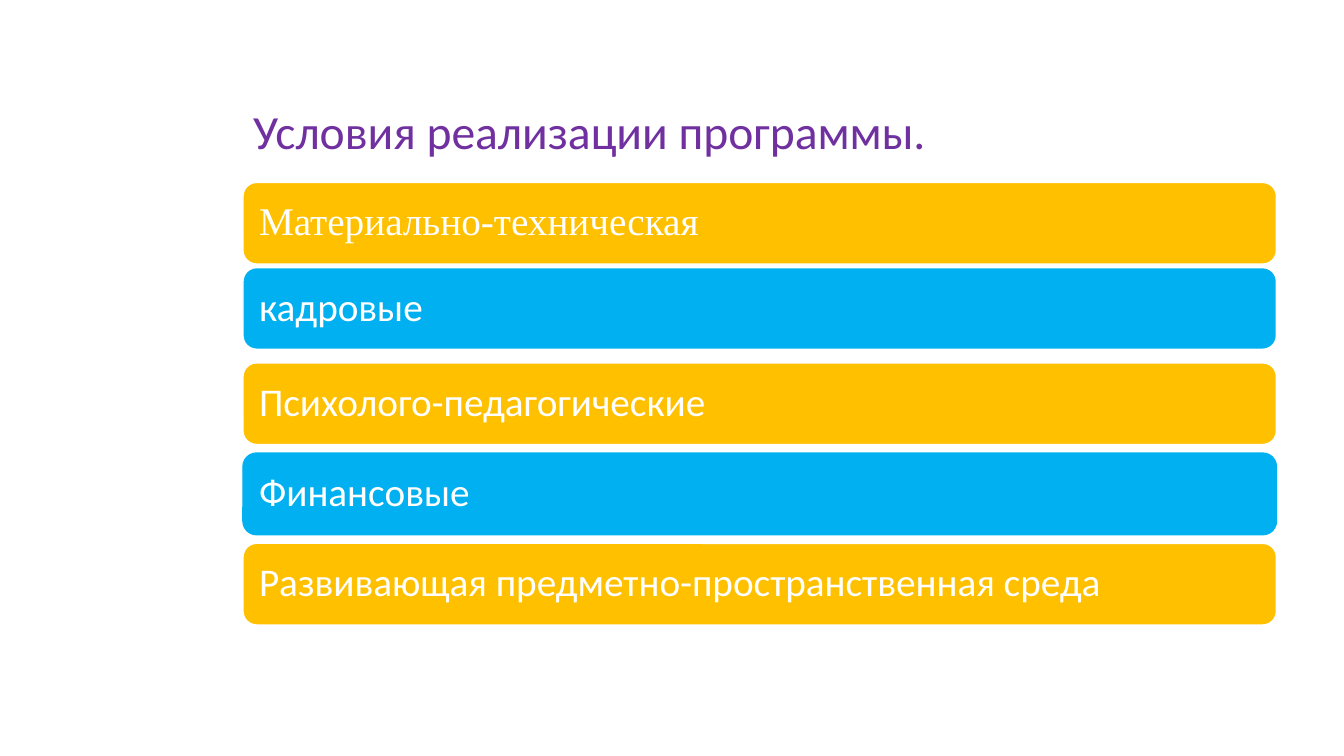
from dataclasses import dataclass

from pptx import Presentation
from pptx.dml.color import RGBColor
from pptx.enum.shapes import MSO_SHAPE
from pptx.enum.text import MSO_ANCHOR, MSO_AUTO_SIZE, PP_ALIGN
from pptx.util import Inches, Pt


@dataclass(frozen=True)
class Theme:
    purple: RGBColor = RGBColor.from_string("7030A0")
    amber: RGBColor = RGBColor.from_string("FFC000")
    blue: RGBColor = RGBColor.from_string("00B0F0")
    white: RGBColor = RGBColor.from_string("FFFFFF")
    sans: str = "Calibri"
    serif: str = "Times New Roman"
    title_size: Pt = Pt(34)
    bar_size: Pt = Pt(28)


def set_text(shape, text, font_name, size, color, anchor):
    text_frame = shape.text_frame
    text_frame.text = text
    text_frame.word_wrap = True
    text_frame.auto_size = MSO_AUTO_SIZE.NONE
    text_frame.vertical_anchor = anchor
    paragraph = text_frame.paragraphs[0]
    paragraph.alignment = PP_ALIGN.LEFT
    paragraph.line_spacing = 0.9
    font = paragraph.runs[0].font
    font.name, font.size, font.color.rgb = font_name, size, color


theme = Theme()
presentation = Presentation()
presentation.slide_width = Inches(13.33)
presentation.slide_height = Inches(7.5)
slide = presentation.slides.add_slide(presentation.slide_layouts[5])

column_left, column_width = Inches(2.41), Inches(10.25)
first_top, row_pitch, bar_height = Inches(1.81), Inches(0.895), Inches(0.81)
inset = Inches(0.12)

title = slide.shapes.title
title.left, title.top = column_left, Inches(0.33)
title.width, title.height = column_width, Inches(1.31)
set_text(title, "Условия реализации программы.", theme.sans, theme.title_size,
         theme.purple, MSO_ANCHOR.BOTTOM)

# Label, font, fill, outline, and shift from the even row grid
conditions = [
    ("Материально-техническая", theme.serif, theme.amber, theme.white, 0),
    ("кадровые", theme.sans, theme.blue, theme.white, Inches(-0.05)),
    ("Психолого-педагогические", theme.sans, theme.amber, theme.white, 0),
    ("Финансовые", theme.sans, theme.blue, theme.blue, 0),
    ("Развивающая предметно-пространственная среда", theme.sans,
     theme.amber, theme.white, 0),
]

for row, (label, font_name, fill, outline, shift) in enumerate(conditions):
    bar = slide.shapes.add_shape(
        MSO_SHAPE.ROUNDED_RECTANGLE, column_left,
        first_top + row * row_pitch + shift, column_width, bar_height)
    bar.shadow.inherit = False
    bar.fill.solid()
    bar.fill.fore_color.rgb = fill
    bar.line.color.rgb = outline
    bar.line.width = Pt(1)
    text_frame = bar.text_frame
    text_frame.margin_left = text_frame.margin_right = inset
    text_frame.margin_top = text_frame.margin_bottom = inset
    set_text(bar, label, font_name, theme.bar_size, theme.white, MSO_ANCHOR.MIDDLE)

presentation.save("out.pptx")
